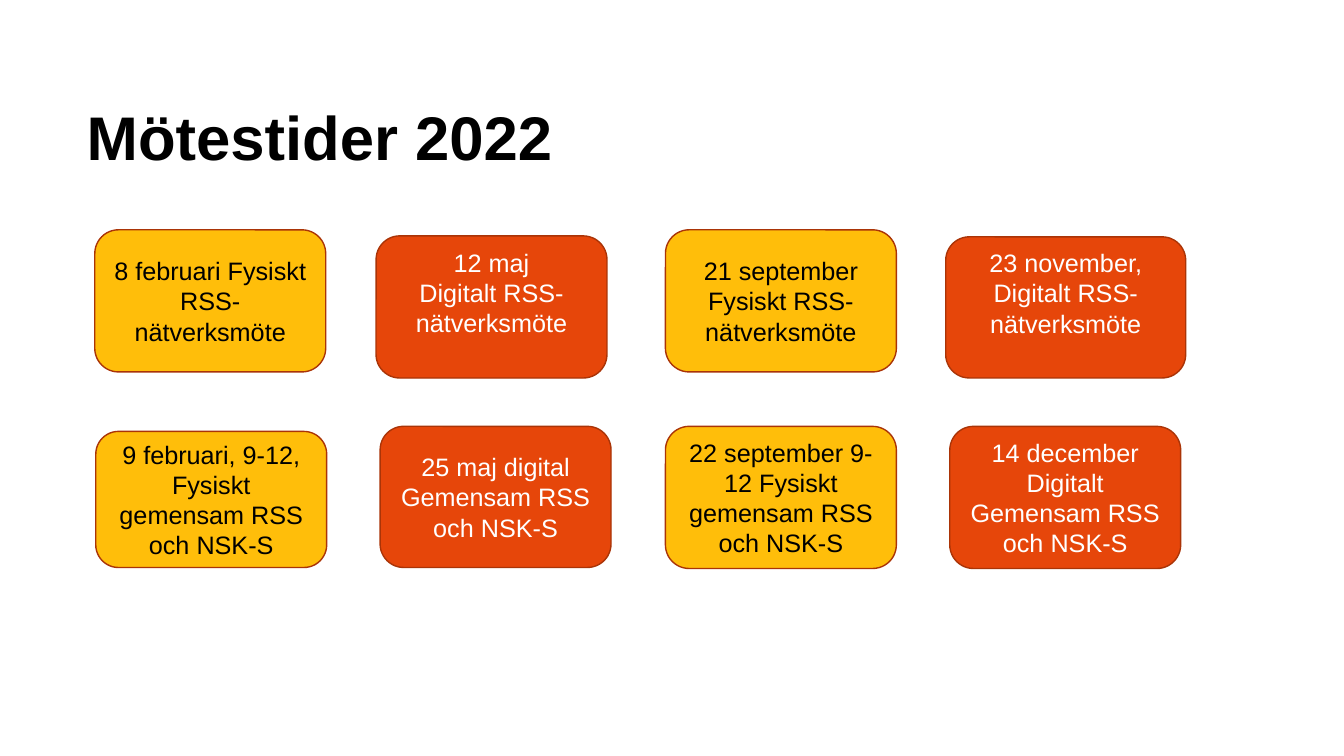
from pptx import Presentation
from pptx import util as u
from pptx.dml.color import RGBColor
from pptx.enum import shapes, text

THEME = {
    "font": "Arial",
    "title": u.Pt(44),
    "body": u.Pt(18),
    "black": RGBColor.from_string("000000"),
    "white": RGBColor.from_string("FFFFFF"),
    "yellow": RGBColor.from_string("FFBE0A"),
    "orange": RGBColor.from_string("E6460A"),
    "outline": RGBColor.from_string("AA3407"),
}
PHYSICAL = (THEME["yellow"], THEME["black"])
DIGITAL = (THEME["orange"], THEME["white"])
BOTTOM, RAISED = 0.05, 0.34

MEETINGS = [
    (0.94, 2.28, 2.29, 1.41, PHYSICAL, BOTTOM, "8 februari Fysiskt RSS-nätverksmöte"),
    (3.73, 2.34, 2.29, 1.41, DIGITAL, RAISED, "12 maj\nDigitalt RSS-nätverksmöte"),
    (6.6, 2.28, 2.29, 1.41, PHYSICAL, BOTTOM, "21 september\vFysiskt RSS-nätverksmöte"),
    (9.38, 2.35, 2.38, 1.4, DIGITAL, RAISED, "23 november, Digitalt RSS- nätverksmöte"),
    (0.95, 4.28, 2.29, 1.35, PHYSICAL, BOTTOM, "9 februari, 9-12, Fysiskt gemensam RSS och NSK-S"),
    (3.77, 4.23, 2.29, 1.4, DIGITAL, BOTTOM, "25 maj digital Gemensam RSS och NSK-S"),
    (6.6, 4.23, 2.29, 1.41, PHYSICAL, BOTTOM, "22 september 9-12 Fysiskt gemensam RSS och NSK-S"),
    (9.42, 4.23, 2.29, 1.41, DIGITAL, BOTTOM, "14 december Digitalt Gemensam RSS och NSK-S"),
]


def set_font(p, size, color, bold=False):
    for r in p.runs:
        for name, value in {"name": THEME["font"], "size": size, "bold": bold}.items():
            setattr(r.font, name, value)
        r.font.color.rgb = color


prs = Presentation()
prs.slide_width, prs.slide_height = u.Inches(13.33), u.Inches(7.5)
s = prs.slides.add_slide(prs.slide_layouts[5])

title = s.shapes.title
title_box = {"left": 0.76, "top": 1.07, "width": 10.51, "height": 1.22}
for name, value in title_box.items():
    setattr(title, name, u.Inches(value))
tf = title.text_frame
tf.text = "Mötestider 2022"
tf.vertical_anchor = text.MSO_ANCHOR.TOP
p = tf.paragraphs[0]
p.alignment = text.PP_ALIGN.LEFT
p.line_spacing = 0.8
set_font(p, THEME["title"], THEME["black"], bold=True)

for left, top, width, height, (fill, ink), bottom, label in MEETINGS:
    box = [u.Inches(v) for v in (left, top, width, height)]
    sp = s.shapes.add_shape(shapes.MSO_SHAPE.ROUNDED_RECTANGLE, *box)
    sp.shadow.inherit = False
    sp.fill.solid()
    sp.fill.fore_color.rgb = fill
    sp.line.color.rgb = THEME["outline"]
    sp.line.width = u.Pt(1)
    tf = sp.text_frame
    tf.text = label
    frame = {
        "word_wrap": True,
        "vertical_anchor": text.MSO_ANCHOR.MIDDLE,
        "margin_bottom": u.Inches(bottom),
    }
    for name, value in frame.items():
        setattr(tf, name, value)
    for p in tf.paragraphs:
        p.alignment = text.PP_ALIGN.CENTER
        set_font(p, THEME["body"], ink)

prs.save("out.pptx")
